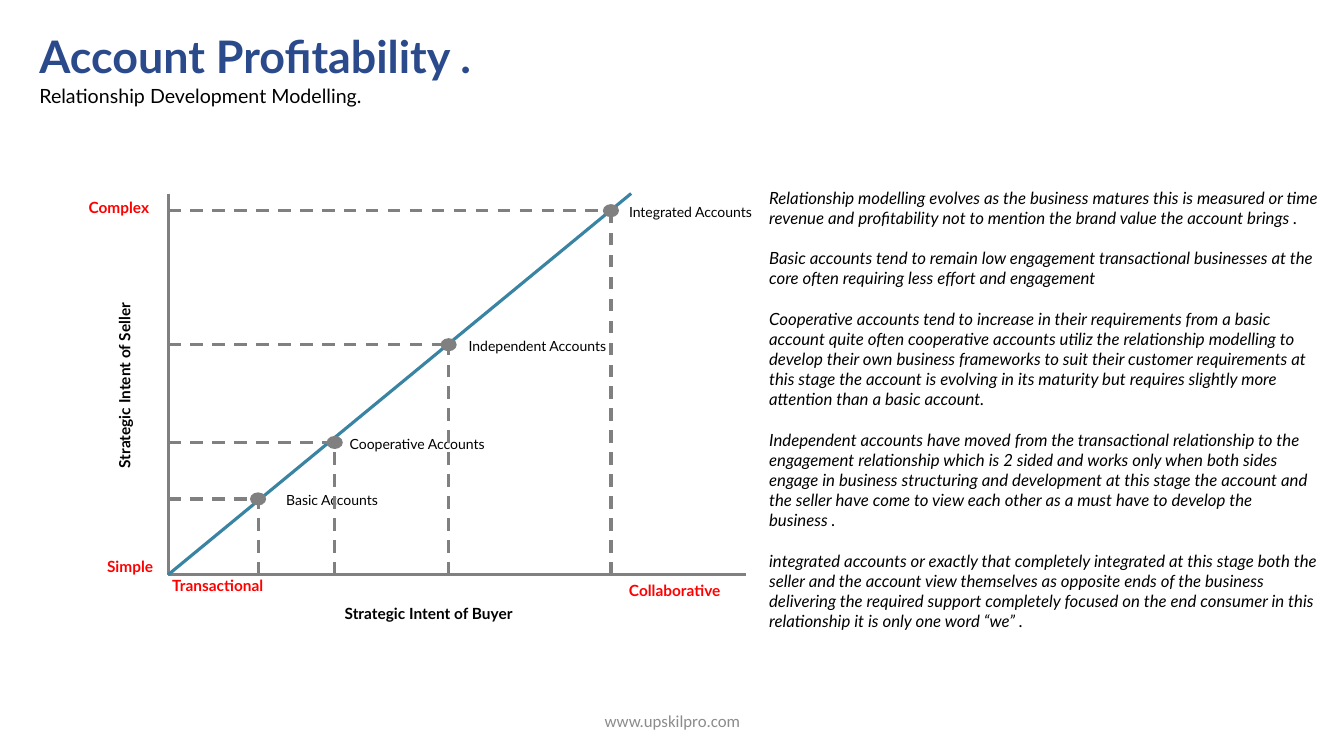
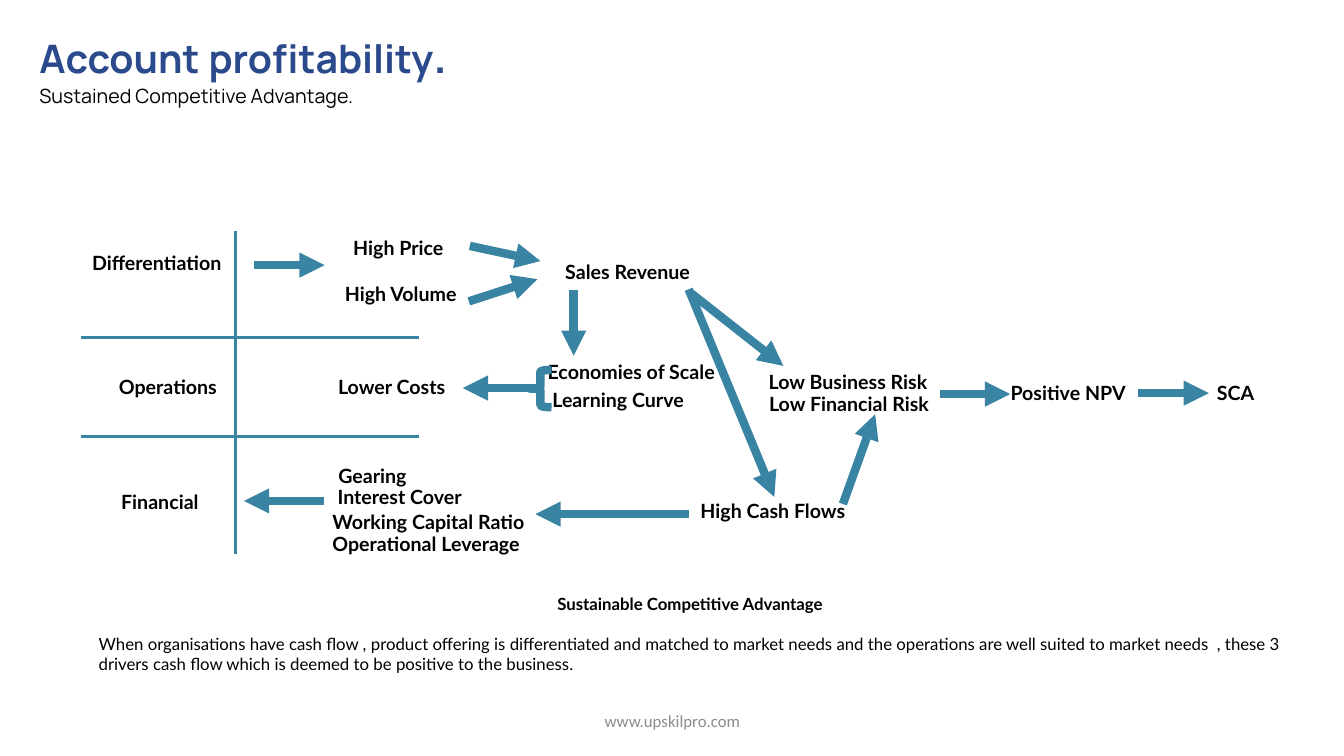
"""Build two account profitability slides: a relationship model and a competitive advantage map."""
from lxml import etree
from pptx import Presentation
from pptx.dml.color import RGBColor
from pptx.enum.dml import MSO_LINE
from pptx.enum.shapes import MSO_CONNECTOR, MSO_SHAPE
from pptx.enum.text import MSO_ANCHOR, MSO_AUTO_SIZE, PP_ALIGN
from pptx.oxml.ns import qn
from pptx.util import Inches, Pt

LEFT, CENTER = PP_ALIGN.LEFT, PP_ALIGN.CENTER
TOP, MIDDLE = MSO_ANCHOR.TOP, MSO_ANCHOR.MIDDLE
GROW, NO_FIT = MSO_AUTO_SIZE.SHAPE_TO_FIT_TEXT, MSO_AUTO_SIZE.NONE
STRAIGHT, DASH = MSO_CONNECTOR.STRAIGHT, MSO_LINE.DASH
DOT, BRACE = MSO_SHAPE.FLOWCHART_CONNECTOR, MSO_SHAPE.LEFT_BRACE
TITLE_ONLY = 5

COLORS = {"title": "2A4A8B", "text": "000000", "red": "FF0000",
          "gray": "808080", "teal": "3984A3", "footer": "8C8C8C"}
BODY_FONT, TITLE_FONT, FOOTER_FONT = "Lato", "Manrope", "Calibri"


def color(name):
    """Return the palette colour of that name."""
    return RGBColor.from_string(COLORS[name])


class Deck:
    """Hold the presentation style and the current slide."""

    def __init__(self):
        """Start an empty widescreen presentation."""
        self.prs = Presentation()
        self.prs.slide_width = Inches(13.33)
        self.prs.slide_height = Inches(7.5)
        self.s = None

    def new_slide(self, title_runs, subtitle, font):
        """Add a slide with its heading and footer."""
        self.s = self.prs.slides.add_slide(self.prs.slide_layouts[TITLE_ONLY])
        sp = self.s.shapes.title
        self.place(sp, 0.29, 0.23, 7.01, 0.88)
        tf = sp.text_frame
        self.frame(tf)
        p = tf.paragraphs[0]
        p.alignment = LEFT
        for text, size in title_runs:
            self.run(p, text, size, "title", True, font=font)
        p = tf.add_paragraph()
        p.alignment = LEFT
        p.line_spacing = 1.07
        p.space_after = Pt(8)
        self.run(p, subtitle, 14, font=font)
        self.text(4.42, 6.95, 4.5, 0.4, "www.upskilpro.com", 12, "footer",
                  align=CENTER, font=FOOTER_FONT, anchor=MIDDLE, fit=NO_FIT)

    def place(self, sp, x, y, w, h):
        """Set the position and size of a shape."""
        sp.left, sp.top, sp.width, sp.height = map(Inches, (x, y, w, h))

    def frame(self, tf, anchor=TOP, fit=GROW):
        """Set the wrapping, anchor and fit of a text frame."""
        tf.word_wrap = True
        tf.auto_size = fit
        tf.vertical_anchor = anchor

    def run(self, p, text, size, ink="text", bold=False, italic=False, font=BODY_FONT):
        """Add a formatted run to a paragraph."""
        r = p.add_run()
        r.text = text
        r.font.name = font
        r.font.size = Pt(size)
        r.font.bold = bold
        r.font.italic = italic
        r.font.color.rgb = color(ink)

    def text(self, x, y, w, h, text, size, ink="text", bold=False, align=LEFT,
             font=BODY_FONT, anchor=TOP, fit=GROW):
        """Add a text box with one paragraph."""
        sp = self.s.shapes.add_textbox(*map(Inches, (x, y, w, h)))
        self.frame(sp.text_frame, anchor, fit)
        p = sp.text_frame.paragraphs[0]
        p.alignment = align
        self.run(p, text, size, ink, bold, font=font)
        return sp

    def add_paragraph(self, sp, text, size, italic=False):
        """Add a left-aligned paragraph one line below the last one."""
        p = sp.text_frame.add_paragraph()
        p.alignment = LEFT
        p.space_before = Pt(size * 1.2)
        self.run(p, text, size, italic=italic)

    def line(self, x1, y1, x2, y2, ink="teal", width=2.25, dash=False):
        """Add a straight line."""
        cn = self.s.shapes.add_connector(STRAIGHT, *map(Inches, (x1, y1, x2, y2)))
        cn.line.color.rgb = color(ink)
        cn.line.width = Pt(width)
        if dash:
            cn.line.dash_style = DASH
        etree.SubElement(cn._element.spPr, qn("a:effectLst"))
        return cn

    def arrow(self, x1, y1, x2, y2):
        """Add a thick line with an arrowhead at its end."""
        cn = self.line(x1, y1, x2, y2, width=6)
        etree.SubElement(cn.line._get_or_add_ln(), qn("a:tailEnd"), type="triangle")

    def dot(self, x, y, w=0.16, h=0.13):
        """Add a filled marker centred on a point."""
        sp = self.s.shapes.add_shape(DOT, *map(Inches, (x - w / 2, y - h / 2, w, h)))
        sp.shadow.inherit = False
        sp.fill.solid()
        sp.fill.fore_color.rgb = color("gray")
        sp.line.fill.background()

    def brace(self, x, y, w, h):
        """Add an open brace with a thick outline."""
        sp = self.s.shapes.add_shape(BRACE, *map(Inches, (x, y, w, h)))
        sp.shadow.inherit = False
        sp.fill.background()
        sp.line.color.rgb = color("teal")
        sp.line.width = Pt(6)


def relationship_slide(deck):
    """Draw the relationship development model."""
    deck.new_slide([("Account Profitability .", 32)],
                   "Relationship Development Modelling.", BODY_FONT)
    left, top, base = 1.67, 1.92, 5.7
    deck.line(left, top, left, base, "gray")
    deck.line(7.4, base, left, base, "gray")
    deck.line(6.26, top, left, base)

    stages = [
        ("Basic Accounts", 2.56, 4.95, 2.74),
        ("Cooperative Accounts", 3.32, 4.39, 3.37),
        ("Independent Accounts", 4.45, 3.42, 4.55),
        ("Integrated Accounts", 6.06, 2.09, 6.14),
    ]
    for name, x, y, label_x in stages:
        deck.line(left, y, x, y, "gray", dash=True)
        deck.line(x, base, x, y, "gray", dash=True)
        deck.dot(x, y)
        deck.text(label_x, y - 0.12, 1.71, 0.27, name, 10)

    deck.text(3.32, 5.94, 3.64, 0.29, "Strategic Intent of Buyer", 11, bold=True)
    sp = deck.text(-0.42, 3.68, 3.31, 0.29, "Strategic Intent of Seller", 11,
                   bold=True, align=CENTER)
    sp.rotation = 270
    extremes = [
        ("Transactional", 1.61, 5.67, LEFT),
        ("Collaborative", 6.14, 5.72, LEFT),
        ("Complex", 0.5, 1.92, CENTER),
        ("Simple ", 0.63, 5.48, CENTER),
    ]
    for name, x, y, align in extremes:
        deck.text(x, y, 1.36, 0.29, name, 11, "red", True, align)

    notes = [
        "Relationship modelling evolves as the business matures this is measured or time "
        "revenue and profitability not to mention the brand value the account brings .",
        "Basic accounts tend to remain low engagement transactional businesses at the core "
        "often requiring less effort and engagement",
        "Cooperative accounts tend to increase in their requirements from a basic account "
        "quite often cooperative accounts utiliz the relationship modelling to develop their "
        "own business frameworks to suit their customer requirements at this stage the account "
        "is evolving in its maturity but requires slightly more attention than a basic account.",
        "Independent accounts have moved from the transactional relationship to the engagement "
        "relationship which is 2 sided and works only when both sides engage in business "
        "structuring and development at this stage the account and the seller have come to "
        "view each other as a must have to develop the business .",
        "integrated accounts or exactly that completely integrated at this stage both the "
        "seller and the account view themselves as opposite ends of the business delivering "
        "the required support completely focused on the end consumer in this relationship it "
        "is only one word “we” .",
    ]
    sp = deck.text(7.53, 1.81, 5.69, 4.34, notes[0], 12)
    sp.text_frame.paragraphs[0].runs[0].font.italic = True
    for note in notes[1:]:
        deck.add_paragraph(sp, note, 12, italic=True)


def advantage_slide(deck):
    """Draw the drivers of sustained competitive advantage."""
    deck.new_slide([("Account", 28), (" ", 32), ("profitability", 28), (".", 32)],
                   "Sustained Competitive Advantage.", TITLE_FONT)
    sp = deck.text(0.88, 5.84, 11.97, 0.91, "Sustainable Competitive Advantage ", 12,
                   bold=True, align=CENTER)
    deck.add_paragraph(
        sp, "When organisations have cash flow , product offering is differentiated and "
        "matched to market needs and the operations are well suited to market needs  , "
        "these 3 drivers cash flow which is deemed to be positive to the business.", 12)

    labels = [
        ("Differentiation", 0.77, 2.44, 1.57),
        ("Operations", 0.99, 3.67, 1.35),
        ("Financial ", 1.07, 4.81, 1.08),
        ("High Price ", 3.19, 2.29, 1.57),
        ("High Volume", 3.19, 2.75, 1.57),
        ("Sales Revenue", 5.44, 2.53, 1.57),
        ("Lower Costs", 3.1, 3.67, 1.57),
        ("Economies of Scale ", 5.32, 3.52, 1.93),
        ("Learning Curve ", 5.19, 3.8, 1.93),
        ("Low Business Risk ", 7.47, 3.62, 1.93),
        ("Low Financial Risk ", 7.48, 3.84, 1.93),
        ("Positive NPV", 9.63, 3.73, 1.93),
        ("SCA", 11.29, 3.73, 1.93),
        ("Gearing", 2.91, 4.55, 1.57),
        ("Interest Cover", 3.18, 4.76, 1.57),
        ("Working Capital Ratio ", 3.18, 5.01, 2.14),
        ("Operational Leverage ", 3.18, 5.23, 2.14),
        ("High Cash Flows ", 6.62, 4.9, 2.14),
    ]
    for name, x, y, w in labels:
        deck.text(x, y, w, 0.34, name, 14, bold=True, align=CENTER)

    deck.line(2.34, 2.29, 2.34, 5.5)
    for y in (3.35, 4.33):
        deck.line(0.8, y, 4.16, y)

    flows = [
        (2.52, 2.63, 3.22, 2.63),
        (4.66, 2.44, 5.36, 2.59),
        (4.65, 2.99, 5.33, 2.77),
        (6.83, 2.89, 7.77, 3.63),
        (5.69, 2.88, 5.69, 3.53),
        (5.34, 3.85, 4.59, 3.85),
        (3.21, 4.97, 2.42, 4.97),
        (6.83, 5.1, 5.31, 5.1),
        (6.83, 2.87, 7.68, 4.93),
        (8.36, 5, 8.68, 4.11),
        (9.32, 3.91, 10.02, 3.91),
        (11.29, 3.9, 11.99, 3.9),
    ]
    for flow in flows:
        deck.arrow(*flow)
    deck.brace(5.25, 3.67, 0.22, 0.37)


def main():
    """Build and save the presentation."""
    deck = Deck()
    relationship_slide(deck)
    advantage_slide(deck)
    deck.prs.save("out.pptx")


if __name__ == "__main__":
    main()
